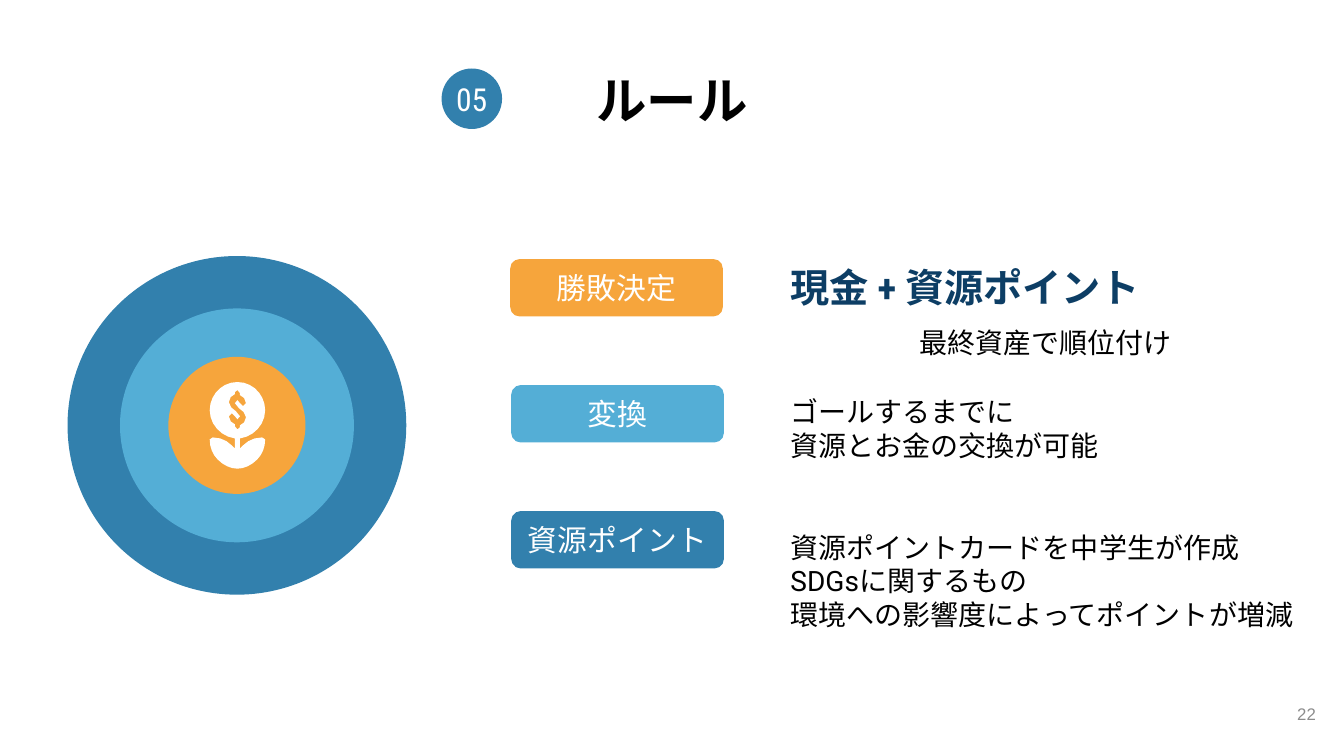
import dataclasses
import math
import typing

import pptx
import pptx.dml.color
import pptx.enum.shapes
import pptx.enum.text
import pptx.util

EMU_PER_PX = 9144  # 100 px to the inch
SHAPE = pptx.enum.shapes.MSO_SHAPE
ALIGN = pptx.enum.text.PP_ALIGN
ANCHOR = pptx.enum.text.MSO_ANCHOR
Point = tuple[float, float]


@dataclasses.dataclass(frozen=True)
class Theme:
    blue: str = "3280AD"
    sky: str = "54AED6"
    orange: str = "F6A53C"
    navy: str = "0D3E65"
    black: str = "000000"
    white: str = "FFFFFF"
    grey: str = "8C8C8C"
    title_pt: float = 36
    heading_pt: float = 28
    badge_pt: float = 22.67
    label_pt: float = 21.33
    body_pt: float = 20
    page_pt: float = 12
    body_font: str = "Roboto"
    condensed_font: str = "Roboto Condensed"
    page_font: str = "Arial"


THEME = Theme()


class Box(typing.NamedTuple):
    left: int
    top: int
    width: int
    height: int


@dataclasses.dataclass(frozen=True)
class Style:
    size: float
    color: str = THEME.black
    font: str = THEME.body_font
    bold: bool = False
    align: ALIGN = ALIGN.LEFT
    anchor: ANCHOR = ANCHOR.MIDDLE
    inset_x: int = 13
    inset_y: int = 13


@dataclasses.dataclass(frozen=True)
class Caption:
    box: Box
    lines: tuple[str, ...]
    style: Style


class Ring(typing.NamedTuple):
    diameter: int
    color: str


class RuleLabel(typing.NamedTuple):
    text: str
    color: str
    left: int


BODY = Style(THEME.body_pt)
LABEL = Style(THEME.label_pt, THEME.white, align=ALIGN.CENTER)
BADGE = Style(THEME.badge_pt, THEME.white, THEME.condensed_font,
              align=ALIGN.CENTER, inset_x=0)

TITLE = Caption(Box(26, 56, 1281, 84), ("ルール",),
                Style(THEME.title_pt, bold=True, align=ALIGN.CENTER, anchor=ANCHOR.TOP))
RULES = (
    Caption(Box(771, 537, 562, 78),
            ("資源ポイントカードを中学生が作成", "SDGsに関するもの",
             "環境への影響度によってポイントが増減"), BODY),
    Caption(Box(771, 253, 400, 63), ("現金 + 資源ポイント",),
            Style(THEME.heading_pt, THEME.navy, THEME.condensed_font, bold=True)),
    Caption(Box(899, 301, 298, 78), ("最終資産で順位付け",), BODY),
    Caption(Box(771, 386, 400, 78), ("ゴールするまでに", "資源とお金の交換が可能"), BODY),
)
PAGE_NUMBER = Caption(Box(1235, 680, 80, 57), ("22",),
                      Style(THEME.page_pt, THEME.grey, THEME.page_font,
                            align=ALIGN.RIGHT, inset_x=10, inset_y=10))

TARGET_CENTER = (235, 422)
RINGS = (Ring(336, THEME.blue), Ring(232, THEME.sky), Ring(136, THEME.orange))

LABELS = (RuleLabel("勝敗決定", THEME.orange, 506), RuleLabel("変換", THEME.sky, 507),
          RuleLabel("資源ポイント", THEME.blue, 507))
LABEL_TOP, LABEL_PITCH = 257, 125

# Segments hold one end point (line) or two controls and an end point (curve).
ICON_AXIS = 235.5
COIN_MIDDLE = 406.5
PLANT_TOP = (ICON_AXIS, 379)
PLANT_RIGHT = (
    (251, 379, 263, 392, 263, 407), (263, 421, 252, 433, 238, 435), (238, 445),
    (239, 444, 240, 443, 241, 442), (246, 437, 252, 434, 260, 434),
    (262, 434, 263, 435, 263, 436), (263, 444, 260, 451, 255, 456),
    (249, 462, 242, 465, ICON_AXIS, 465),
)
DOLLAR_TOP = (ICON_AXIS, 387)
DOLLAR_RIGHT = (
    (237, 387, 238, 389, 238, 390), (238, 392), (241, 393, 244, 396, 244, 400),
    (244, 401, 242, 403, 241, 403), (239, 403, 238, 401, 238, 400),
    (238, 398, 237, 397, ICON_AXIS, 397), (234, 397, 233, 399, 233, 400),
    (233, 401, 235, 403, 237, 405), (240, 407, 244, 410, 244, 414),
    (244, 418, 241, 421, 238, 422), (238, 424), (238, 425, 237, 426, ICON_AXIS, 426),
)


def emu(px: float) -> pptx.util.Emu:
    return pptx.util.Emu(round(px * EMU_PER_PX))


def rgb(color: str) -> pptx.dml.color.RGBColor:
    return pptx.dml.color.RGBColor.from_string(color)


def write(frame, lines: tuple[str, ...], style: Style) -> None:
    frame.word_wrap = True
    frame.vertical_anchor = style.anchor
    frame.margin_left = frame.margin_right = emu(style.inset_x)
    frame.margin_top = frame.margin_bottom = emu(style.inset_y)
    for index, line in enumerate(lines):
        paragraph = frame.add_paragraph() if index else frame.paragraphs[0]
        paragraph.alignment = style.align
        run = paragraph.add_run()
        run.text = line
        run.font.size = pptx.util.Pt(style.size)
        run.font.name = style.font
        run.font.bold = style.bold
        run.font.color.rgb = rgb(style.color)


def add_caption(slide, caption: Caption) -> None:
    frame = slide.shapes.add_textbox(*map(emu, caption.box)).text_frame
    write(frame, caption.lines, caption.style)


def paint(shape, color: str) -> None:
    shape.shadow.inherit = False
    shape.fill.solid()
    shape.fill.fore_color.rgb = rgb(color)
    shape.line.fill.background()


def add_filled(slide, preset: SHAPE, box: Box, color: str):
    shape = slide.shapes.add_shape(preset, *map(emu, box))
    paint(shape, color)
    return shape


def trace(start: Point, segments: tuple[tuple[float, ...], ...]) -> list[Point]:
    """Turn lines and cubic curves into a chain of points, denser on long curves."""
    points = [start]
    for segment in segments:
        if len(segment) == 2:
            points.append(segment)
            continue
        x0, y0 = points[-1]
        x1, y1, x2, y2, x3, y3 = segment
        steps = max(1, round(math.dist((x0, y0), (x3, y3)) / 6))
        for step in range(1, steps + 1):
            t = step / steps
            a, b, c, d = (1 - t) ** 3, 3 * t * (1 - t) ** 2, 3 * t * t * (1 - t), t ** 3
            points.append((a * x0 + b * x1 + c * x2 + d * x3,
                           a * y0 + b * y1 + c * y2 + d * y3))
    return points


def add_money_plant(slide) -> None:
    plant = trace(PLANT_TOP, PLANT_RIGHT)
    plant += [(2 * ICON_AXIS - x, y) for x, y in plant[-2:0:-1]]
    dollar = trace(DOLLAR_TOP, DOLLAR_RIGHT)
    dollar += [(2 * ICON_AXIS - x, 2 * COIN_MIDDLE - y) for x, y in dollar[1:-1]]
    outline, cutout = ([(emu(x), emu(y)) for x, y in part] for part in (plant, dollar))
    builder = slide.shapes.build_freeform(*outline[0])
    builder.add_line_segments(outline[1:], close=True)
    builder.move_to(*cutout[0])
    builder.add_line_segments(cutout[1:], close=True)
    paint(builder.convert_to_shape(), THEME.white)


def add_rings(slide) -> None:
    x, y = TARGET_CENTER
    for ring in RINGS:
        radius = ring.diameter // 2
        box = Box(x - radius, y - radius, ring.diameter, ring.diameter)
        add_filled(slide, SHAPE.OVAL, box, ring.color)


def add_labels(slide) -> None:
    for row, label in enumerate(LABELS):
        box = Box(label.left, LABEL_TOP + row * LABEL_PITCH, 211, 57)
        button = add_filled(slide, SHAPE.ROUNDED_RECTANGLE, box, label.color)
        write(button.text_frame, (label.text,), LABEL)


def main() -> None:
    deck = pptx.Presentation()
    deck.slide_width, deck.slide_height = emu(1333), emu(750)
    slide = deck.slides.add_slide(deck.slide_layouts[6])
    add_caption(slide, TITLE)
    add_rings(slide)
    for rule in RULES:
        add_caption(slide, rule)
    add_money_plant(slide)
    add_labels(slide)
    badge = add_filled(slide, SHAPE.OVAL, Box(438, 68, 60, 60), THEME.blue)
    write(badge.text_frame, ("05",), BADGE)
    add_caption(slide, PAGE_NUMBER)
    deck.save("out.pptx")


if __name__ == "__main__":
    main()
